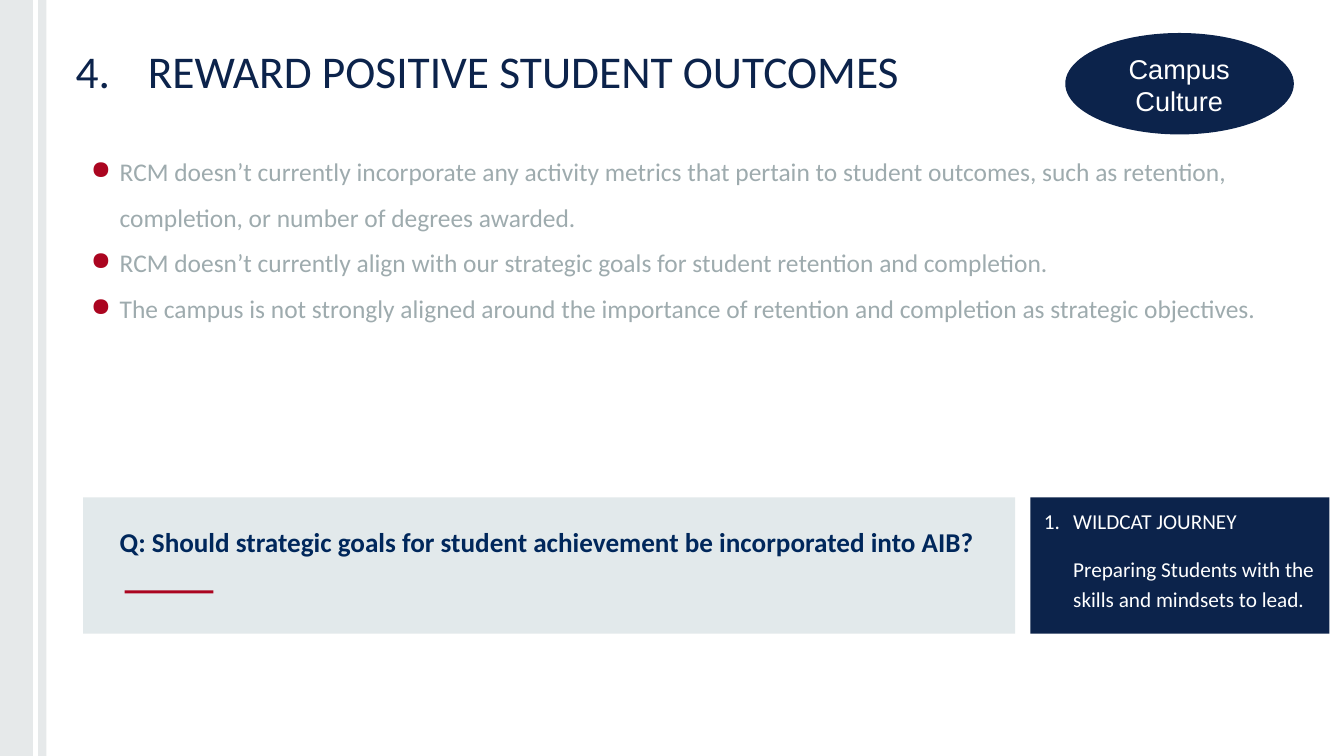
"""Build the slide on rewarding positive student outcomes."""
from lxml import etree
from pptx import Presentation
from pptx.dml.color import RGBColor
from pptx.enum.shapes import MSO_SHAPE
from pptx.enum.text import MSO_ANCHOR, PP_ALIGN
from pptx.oxml.ns import qn
from pptx.util import Inches, Pt

RECT, OVAL = MSO_SHAPE.RECTANGLE, MSO_SHAPE.OVAL
TOP, MID = MSO_ANCHOR.TOP, MSO_ANCHOR.MIDDLE
LEFT, MIDDLE = PP_ALIGN.LEFT, PP_ALIGN.CENTER
HUES = {"navy": "0C234B", "ink": "00275B", "red": "AB0520",
        "gray": "9EABAE", "pale": "E2E9EB", "white": "FFFFFF"}


def block(kind, hue, *box):
    """Add a plain filled shape."""
    shape = slide.shapes.add_shape(kind, *map(Inches, box))
    shape.shadow.inherit = False
    shape.fill.solid()
    shape.fill.fore_color.rgb = RGBColor.from_string(HUES[hue])
    shape.line.fill.background()
    return shape


def write(shape, text, size, hue, pads, anchor=TOP, font="Calibri", align=LEFT,
          indent=None, space=None, bold=False, bullet=None, wrap=True):
    """Fill a shape with styled text and return its paragraphs."""
    frame = shape.text_frame
    frame.text = text
    frame.word_wrap = wrap
    frame.vertical_anchor = anchor
    (frame.margin_left, frame.margin_top,
     frame.margin_right, frame.margin_bottom) = map(Inches, pads)
    for para in frame.paragraphs:
        para.alignment = align
        if space:
            para.line_spacing = space
        props = para._p.get_or_add_pPr()
        if indent:
            props.set("marL", str(Inches(indent[0])))
            props.set("indent", str(Inches(indent[1])))
        if bullet:
            tint = etree.SubElement(props, qn("a:buClr"))
            etree.SubElement(tint, qn("a:srgbClr"), val=HUES["red"])
            etree.SubElement(props, qn("a:buChar"), char=bullet)
        for run in para.runs:
            run.font.name = font
            run.font.size = Pt(size)
            run.font.bold = bold
            run.font.color.rgb = RGBColor.from_string(HUES[hue])
    return frame.paragraphs


deck = Presentation()
deck.slide_width, deck.slide_height = Inches(21.99), Inches(12.37)
slide = deck.slides.add_slide(deck.slide_layouts[6])

rail = block(RECT, "gray", 0, 0, 0.76, 12.37)
color = rail.fill._xPr.find(qn("a:solidFill"))[0]
etree.SubElement(color, qn("a:alpha"), val="25000")
block(RECT, "white", 0.54, 0, 0.08, 12.37)

EVEN = (0.1, 0.1, 0.1, 0.1)
title = slide.shapes.add_textbox(*map(Inches, (1.12, 0.66, 19.75, 0.99)))
write(title, "4.\tREWARD POSITIVE STUDENT OUTCOMES", 53.5, "navy", EVEN,
      anchor=MID, indent=(1.2, -1.18))

points = [
    "RCM doesn’t currently incorporate any activity metrics that pertain to "
    "student outcomes, such as retention, completion, or number of degrees awarded.",
    "RCM doesn’t currently align with our strategic goals for student "
    "retention and completion.",
    "The campus is not strongly aligned around the importance of retention "
    "and completion as strategic objectives.",
]
body = slide.shapes.add_textbox(*map(Inches, (1.36, 2.2, 19.51, 5.68)))
write(body, "\n".join(points), 30, "gray", (0.1, 0.1, 0.1, 0.08),
      indent=(0.5, -0.47), space=1.5, bullet="●")

block(RECT, "pale", 1.36, 8.14, 15.25, 2.23)
query = slide.shapes.add_textbox(*map(Inches, (1.86, 8.54, 14.47, 0.65)))
write(query, "Q: Should strategic goals for student achievement be "
      "incorporated into AIB?", 32, "ink", EVEN, anchor=MID, bold=True)
block(RECT, "red", 2.04, 9.66, 1.45, 0.05)

goal = block(RECT, "navy", 16.86, 8.14, 4.89, 2.23)
lines = write(goal, "1.\tWILDCAT JOURNEY\n\tPreparing Students with the skills "
              "and mindsets to lead.", 25, "white", (0.2, 0.1, 0.1, 0.05),
              indent=(0.5, -0.48), space=1.2)
lines[1].space_before = Pt(20)

block(OVAL, "navy", 17.43, 0.54, 3.74, 1.66)
badge = slide.shapes.add_textbox(*map(Inches, (18.36, 0.8, 1.87, 1.18)))
write(badge, "Campus\vCulture", 32, "white", (0.1, 0.05, 0.1, 0.05),
      font="Arial", align=MIDDLE, wrap=False)

deck.save("out.pptx")
